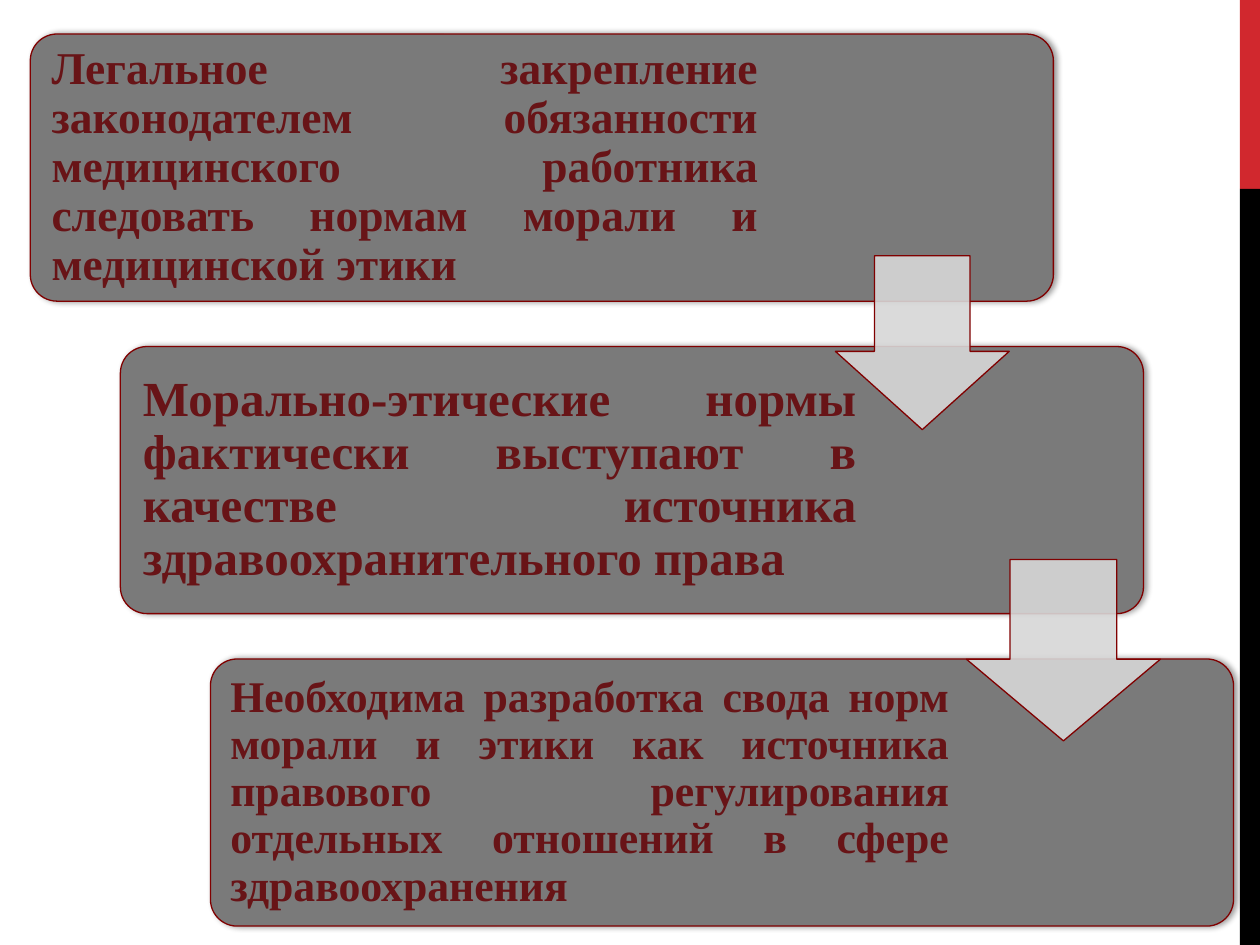
"""Build a slide of three staggered steps joined by down arrows."""
from lxml.etree import SubElement
from pptx import Presentation
from pptx.dml.color import RGBColor
from pptx.enum.shapes import MSO_SHAPE as SHAPE
from pptx.enum.text import MSO_ANCHOR as ANCHOR, PP_ALIGN as ALIGN
from pptx.oxml.ns import qn
from pptx.util import Inches, Pt

COLORS = {
    "red": "D1282E",
    "black": "000000",
    "box": "7A7A7A",
    "outline": "800000",
    "text": "681417",
    "arrow": "D7D7D7",
}
FONT = "Times New Roman"
BOX_W, BOX_H = 8.12, 2.12
BOX_LEFT, BOX_TOP = 0.24, 0.27
STEP_X, STEP_Y = 0.715, 2.48
LABEL_DX, LABEL_DY, LABEL_H = 0.06, 0.06, 2

STEPS = [
    ("Легальное закрепление законодателем обязанности медицинского работника "
     "следовать нормам морали и медицинской этики", 26, 5.83, 0.11),
    ("Морально-этические нормы фактически выступают в качестве источника "
     "здравоохранительного права", 28, 5.9, 0.12),
    ("Необходима разработка свода норм морали и этики как источника правового "
     "регулирования отдельных отношений в сфере здравоохранения", 25, 5.9, 0.1),
]
ARROWS = [(6.63, 2.03, 1.38, 1.38), (7.67, 4.44, 1.54, 1.44)]


def rgb(name):
    return RGBColor.from_string(COLORS[name])


def add_shape(s, kind, box, fill, line=None, adjustments=()):
    sp = s.shapes.add_shape(kind, *map(Inches, box))
    sp.shadow.inherit = False
    sp.fill.solid()
    sp.fill.fore_color.rgb = rgb(fill)
    if line:
        sp.line.color.rgb = rgb(line)
        sp.line.width = Pt(0.75)
    else:
        sp.line.fill.background()
    for i, value in enumerate(adjustments):
        sp.adjustments[i] = value
    return sp


def set_alpha(color, percent):
    SubElement(color, qn("a:alpha"), val=str(percent * 1000))


def add_shadow(sp):
    effects = sp.element.spPr.find(qn("a:effectLst"))
    shadow = SubElement(effects, qn("a:outerShdw"), blurRad=str(Pt(3.1)),
                        dist=str(Pt(1.8)), dir="0", rotWithShape="0")
    set_alpha(SubElement(shadow, qn("a:srgbClr"), val=COLORS["black"]), 40)


def add_label(s, box, text, size, inset):
    tf = s.shapes.add_textbox(*map(Inches, box)).text_frame
    tf.word_wrap = True
    tf.vertical_anchor = ANCHOR.MIDDLE
    tf.margin_left = tf.margin_right = Inches(inset)
    tf.margin_top = tf.margin_bottom = Inches(inset)
    tf.text = text
    p = tf.paragraphs[0]
    p.alignment = ALIGN.JUSTIFY
    p.line_spacing = 0.9
    font = p.runs[0].font
    font.name, font.size, font.bold = FONT, Pt(size), True
    font.color.rgb = rgb("text")


def add_step(s, index, text, size, width, inset):
    left, top = BOX_LEFT + index * STEP_X, BOX_TOP + index * STEP_Y
    sp = add_shape(s, SHAPE.ROUNDED_RECTANGLE, (left, top, BOX_W, BOX_H),
                   "box", "outline", [0.1])
    add_shadow(sp)
    label_box = (left + LABEL_DX, top + LABEL_DY, width, LABEL_H)
    add_label(s, label_box, text, size, inset)


def add_arrow(s, box):
    sp = add_shape(s, SHAPE.DOWN_ARROW, box, "arrow", "outline", [0.55, 0.45])
    set_alpha(sp.element.spPr.find(qn("a:solidFill"))[0], 90)


def main():
    prs = Presentation()
    prs.slide_width, prs.slide_height = Inches(10), Inches(7.5)
    s = prs.slides.add_slide(prs.slide_layouts[6])
    add_shape(s, SHAPE.RECTANGLE, (9.84, 0, 0.16, 1.5), "red")
    add_shape(s, SHAPE.RECTANGLE, (9.84, 1.5, 0.16, 6), "black")
    for index, step in enumerate(STEPS):
        add_step(s, index, *step)
    for box in ARROWS:
        add_arrow(s, box)
    prs.save("out.pptx")


if __name__ == "__main__":
    main()
